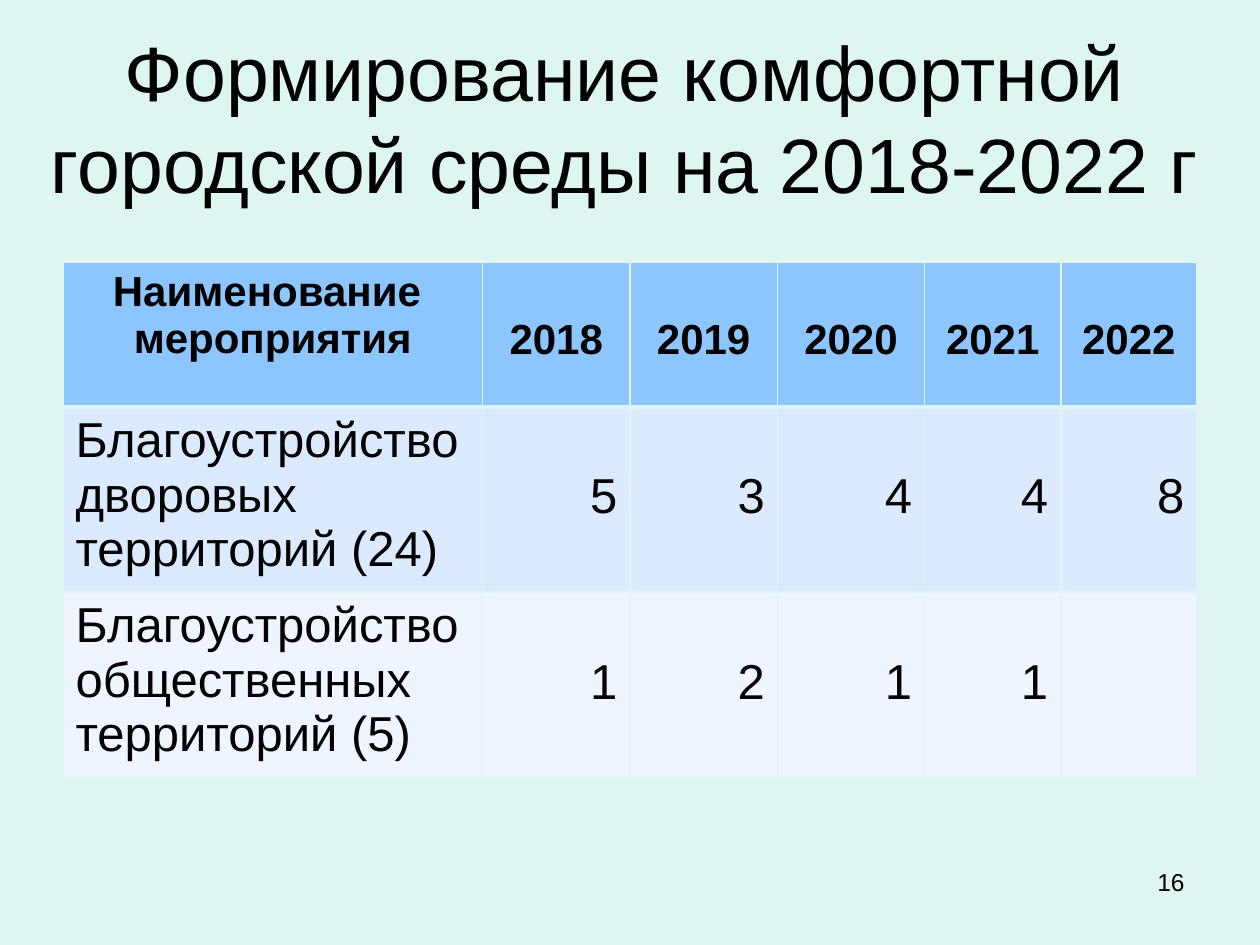
from lxml.etree import SubElement
from pptx import Presentation
from pptx.dml.color import RGBColor
from pptx.enum.text import MSO_ANCHOR as Anchor, PP_ALIGN as Align
from pptx.oxml.ns import qn
from pptx.util import Inches, Pt

# Content
TITLE = "Формирование комфортной городской среды на 2018-2022 г"
PAGE_NUMBER = "16"
HEADINGS = ["Наименование  мероприятия", "2018", "2019", "2020", "2021", "2022"]
MEASURES = [
    ["Благоустройство\nдворовых\nтерриторий (24)", "5", "3", "4", "4", "8"],
    ["Благоустройство общественных территорий (5)", "1", "2", "1", "1", ""],
]

# Look
COLORS = {"page": "DEF6F1", "heading": "8DC6FF", "odd": "DBEAFF",
          "even": "EEF5FF", "text": "000000"}
FONT = "Arial"
COLUMNS = [3.33, 1.17, 1.17, 1.17, 1.08, 1.08]
ROWS = [1.15, 1.47, 1.47]
TABLE_LEFT, TABLE_TOP = 0.5, 2.08
CELL_MARGIN = 0.05
LINE_HEIGHT = 1.15  # share of the font size
HEADING_FORMAT = {"size": Pt(24), "bold": True}
MEASURE_FORMAT = {"size": Pt(28), "bold": False}


def color(name):
    return RGBColor.from_string(COLORS[name])


def write(frame, text, align, formats):
    frame.text = text
    for paragraph in frame.paragraphs:
        paragraph.alignment = align
        for key, value in {"name": FONT, **formats}.items():
            for font in [paragraph.font] + [run.font for run in paragraph.runs]:
                setattr(font, key, value)
                font.color.rgb = color("text")


def add_text(slide, box, text, align, anchor, formats):
    frame = slide.shapes.add_textbox(*map(Inches, box)).text_frame
    frame.word_wrap = True
    frame.vertical_anchor = anchor
    write(frame, text, align, formats)


def set_borders(cell, bottom_width):
    widths = {"a:lnL": 1, "a:lnR": 1, "a:lnT": 1, "a:lnB": bottom_width}
    properties = cell._tc.get_or_add_tcPr()
    for position, (side, width) in enumerate(widths.items()):
        line = SubElement(properties, qn(side), w=str(Pt(width)))
        fill = SubElement(line, qn("a:solidFill"))
        SubElement(fill, qn("a:srgbClr"), val=COLORS["page"])
        properties.insert(position, line)


def add_measures(slide):
    table = slide.shapes.add_table(
        len(ROWS), len(COLUMNS), *map(Inches, (TABLE_LEFT, TABLE_TOP, sum(COLUMNS), sum(ROWS)))
    ).table
    for column, width in zip(table.columns, COLUMNS):
        column.width = Inches(width)
    for row, height in zip(table.rows, ROWS):
        row.height = Inches(height)

    fills = ["heading", "odd", "even"]
    for r, texts in enumerate([HEADINGS] + MEASURES):
        formats = MEASURE_FORMAT if r else HEADING_FORMAT
        for c, text in enumerate(texts):
            cell = table.cell(r, c)
            cell.fill.solid()
            cell.fill.fore_color.rgb = color(fills[r])
            set_borders(cell, 1 if r else 3)
            if r == 0:
                align = Align.CENTER
            else:
                align = Align.RIGHT if c else Align.LEFT
            write(cell.text_frame, text, align, formats)
            # Values stand level with the second line of the label
            if c:
                line = formats["size"].inches * LINE_HEIGHT
                cell.margin_top = Inches(CELL_MARGIN + line)


def main():
    deck = Presentation()
    deck.slide_width, deck.slide_height = Inches(10), Inches(7.5)
    slide = deck.slides.add_slide(deck.slide_layouts[6])
    slide.background.fill.solid()
    slide.background.fill.fore_color.rgb = color("page")

    add_measures(slide)
    add_text(slide, (0.17, 0.3, 9.58, 1.25), TITLE, Align.CENTER, Anchor.MIDDLE,
             {"size": Pt(44)})
    add_text(slide, (7.17, 6.83, 2.33, 0.52), PAGE_NUMBER, Align.RIGHT, Anchor.TOP,
             {"size": Pt(14)})
    deck.save("out.pptx")


if __name__ == "__main__":
    main()
